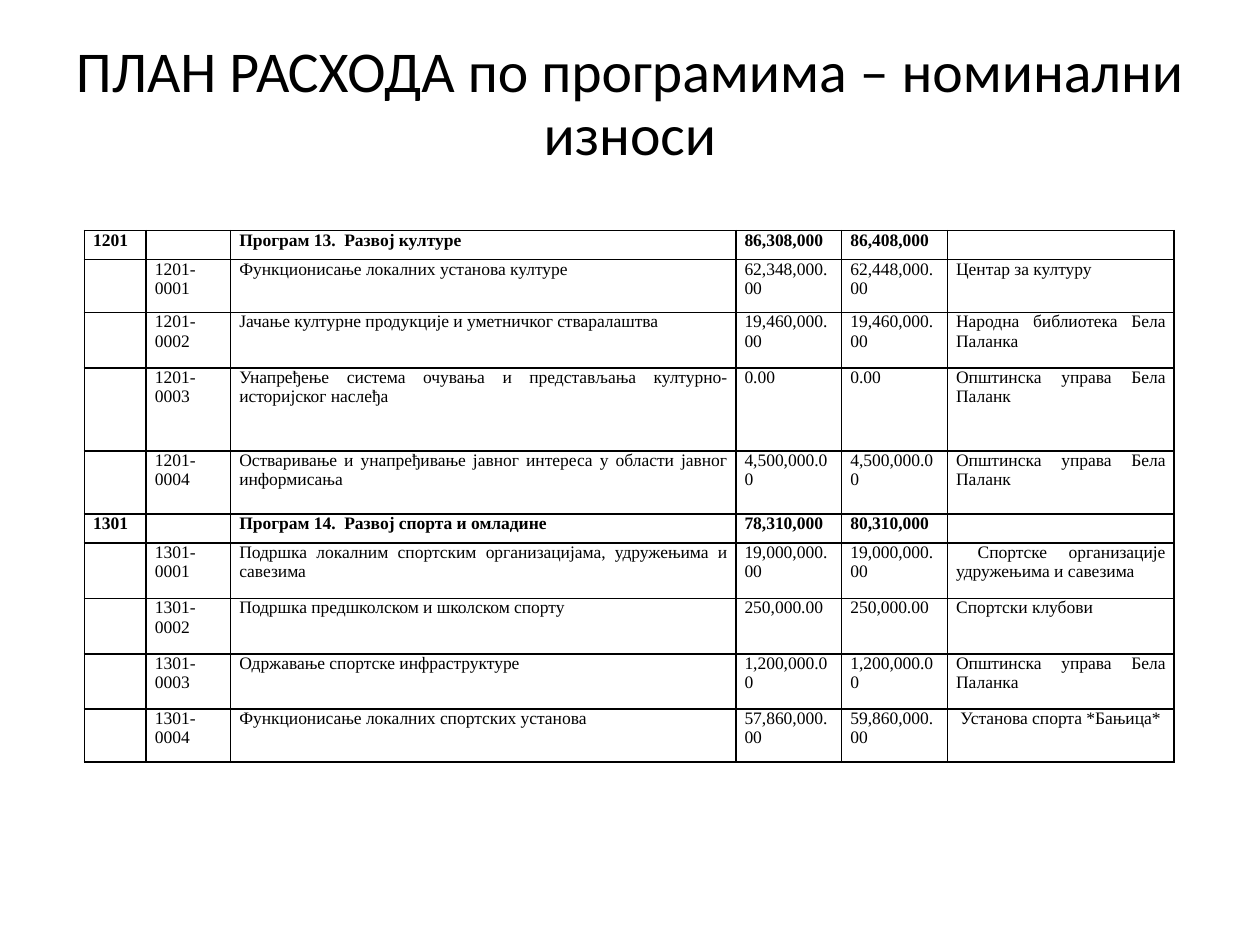
from dataclasses import dataclass

from lxml.etree import SubElement
from pptx import Presentation
from pptx.dml.color import RGBColor
from pptx.enum.text import MSO_ANCHOR, PP_ALIGN
from pptx.oxml.ns import qn
from pptx.util import Inches, Pt

BLACK = "000000"
COL_WIDTHS = (0.49, 0.67, 4.01, 0.84, 0.84, 1.8)
BORDER_TAGS = ("a:lnL", "a:lnR", "a:lnT", "a:lnB")


@dataclass
class Activity:
    name: str
    first_amount: str
    second_amount: str
    holder: str
    height: float


@dataclass
class Program:
    code: str
    name: str
    first_amount: str
    second_amount: str
    activities: list[Activity]


@dataclass
class Row:
    texts: tuple[str, ...]
    height: float
    bold: bool


PROGRAMS = [
    Program("1201", "Програм 13.  Развој културе", "86,308,000", "86,408,000", [
        Activity("Функционисање локалних установа културе ",
                 "62,348,000.00", "62,448,000.00", "Центар за културу", 0.42),
        Activity("Јачање културне продукције и уметничког стваралаштва",
                 "19,460,000.00", "19,460,000.00", "Народна библиотека Бела Паланка", 0.44),
        Activity("Унапређење система очувања и представљања културно-историјског наслеђа",
                 "0.00", "0.00", "Општинска управа Бела Паланк", 0.66),
        Activity("Остваривање и унапређивање јавног интереса у области јавног информисања",
                 "4,500,000.00", "4,500,000.00", "Општинска управа Бела Паланк", 0.5),
    ]),
    Program("1301", "Програм 14.  Развој спорта и омладине", "78,310,000", "80,310,000", [
        Activity("Подршка локалним спортским организацијама, удружењима и савезима",
                 "19,000,000.00", "19,000,000.00",
                 " Спортске организације удружењима и савезима", 0.44),
        Activity("Подршка предшколском и школском спорту",
                 "250,000.00", "250,000.00", "Спортски клубови", 0.44),
        Activity("Одржавање спортске инфраструктуре",
                 "1,200,000.00", "1,200,000.00", "Општинска управа Бела Паланкa", 0.44),
        Activity("Функционисање локалних спортских установа",
                 "57,860,000.00", "59,860,000.00", " Установа спорта *Бањица*", 0.42),
    ]),
]


def color(value: str) -> RGBColor:
    return RGBColor.from_string(value)


def add_run(p, text: str, font: str, size: float, bold: bool = False) -> None:
    r = p.add_run()
    r.text = text
    r.font.name = font
    r.font.size = Pt(size)
    r.font.bold = bold
    r.font.color.rgb = color(BLACK)


def add_title(s, text: str) -> None:
    sp = s.shapes.add_textbox(Inches(0.3), Inches(0.25), Inches(9.4), Inches(1.17))
    tf = sp.text_frame
    tf.word_wrap = True
    tf.vertical_anchor = MSO_ANCHOR.MIDDLE
    p = tf.paragraphs[0]
    p.alignment = PP_ALIGN.CENTER
    p.line_spacing = 0.9
    add_run(p, text, "Calibri", 33)


def program_rows(program: Program) -> list[Row]:
    rows = [Row((program.code, "", program.name, program.first_amount,
                 program.second_amount, ""), 0.23, True)]
    for number, a in enumerate(program.activities, 1):
        texts = ("", f"{program.code}-{number:04d}", a.name,
                 a.first_amount, a.second_amount, a.holder)
        rows.append(Row(texts, a.height, False))
    return rows


def add_borders(cell) -> None:
    tc_pr = cell._tc.get_or_add_tcPr()
    for tag in BORDER_TAGS:
        ln = SubElement(tc_pr, qn(tag), w=str(Pt(1)))
        fill = SubElement(ln, qn("a:solidFill"))
        SubElement(fill, qn("a:srgbClr"), val=BLACK)


def fill_cell(cell, text: str, bold: bool) -> None:
    cell.margin_left = cell.margin_right = Inches(0.07)
    cell.margin_top = cell.margin_bottom = 0
    add_borders(cell)
    cell.fill.background()
    p = cell.text_frame.paragraphs[0]
    p.alignment = PP_ALIGN.JUSTIFY
    if text:
        add_run(p, text, "Times New Roman", 10, bold)
    else:
        SubElement(p._p, qn("a:endParaRPr"), sz="1000")


def add_budget_table(s, rows: list[Row]) -> None:
    width = sum(COL_WIDTHS)
    height = sum(row.height for row in rows)
    frame = s.shapes.add_table(len(rows), len(COL_WIDTHS), Inches(0.67), Inches(1.83),
                               Inches(width), Inches(height))
    table = frame.table
    table.first_row = table.horz_banding = False
    for column, col_width in zip(table.columns, COL_WIDTHS):
        column.width = Inches(col_width)
    for table_row, row in zip(table.rows, rows):
        table_row.height = Inches(row.height)
        for cell, text in zip(table_row.cells, row.texts):
            fill_cell(cell, text, row.bold)


def main() -> None:
    prs = Presentation()
    prs.slide_width, prs.slide_height = Inches(10), Inches(7.5)
    s = prs.slides.add_slide(prs.slide_layouts[6])
    add_title(s, "ПЛАН РАСХОДА по програмима – номинални износи")
    add_budget_table(s, [row for program in PROGRAMS for row in program_rows(program)])
    prs.save("out.pptx")


if __name__ == "__main__":
    main()
